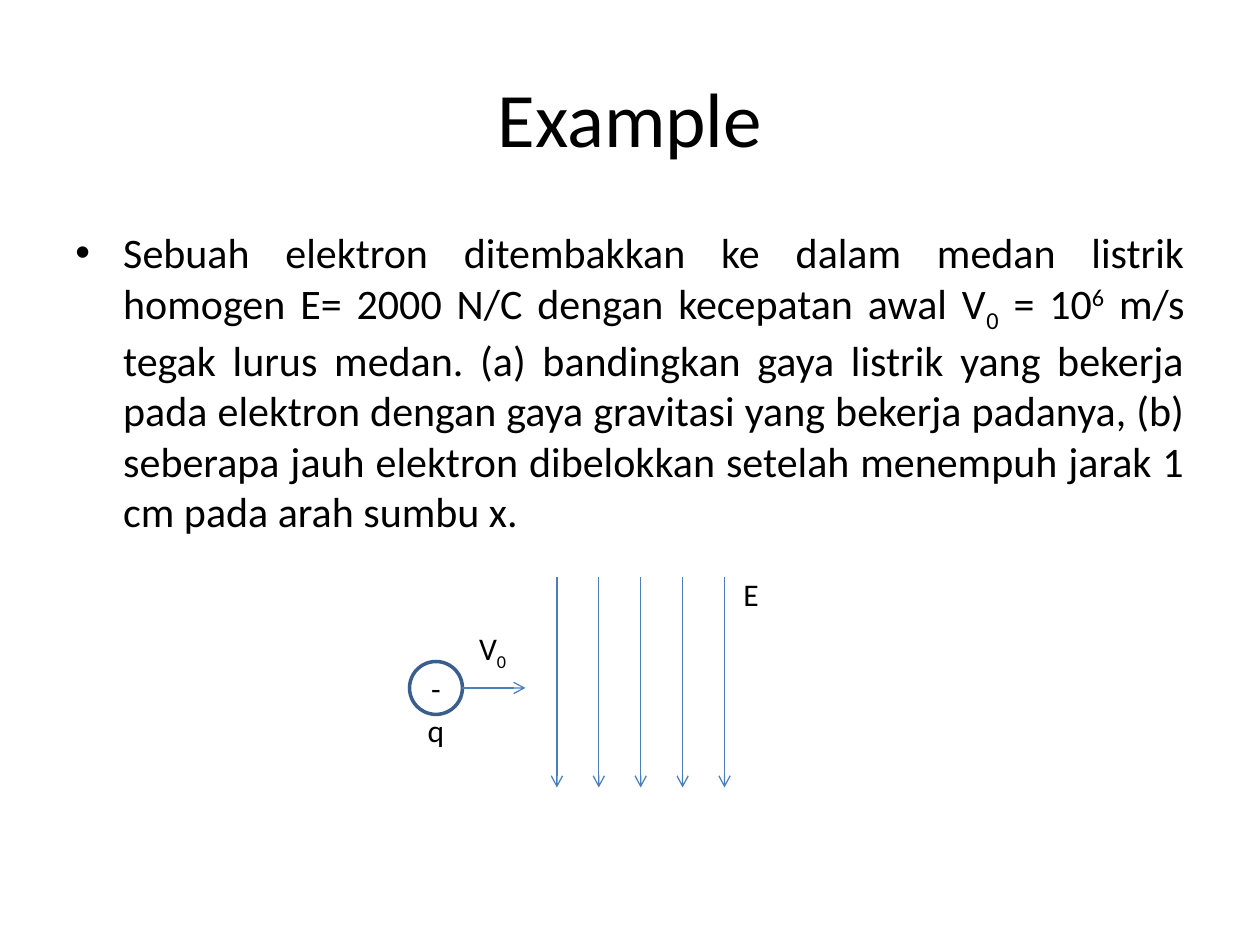
import pptx
import pptx.util
import pptx.dml.color
import pptx.enum.shapes
import pptx.enum.text
import pptx.oxml
import pptx.oxml.ns
from pptx.util import Inches

# Content: each run is (text, baseline shift in percent)
TITLE = "Example"
PROBLEM = [
    ("Sebuah elektron ditembakkan ke dalam medan listrik homogen E= 2000 N/C "
     "dengan kecepatan awal V", 0),
    ("0", -25),
    (" = 10", 0),
    ("6", 30),
    (" m/s tegak lurus medan. (a) bandingkan gaya listrik yang bekerja pada "
     "elektron dengan gaya gravitasi yang bekerja padanya, (b) seberapa jauh "
     "elektron dibelokkan setelah menempuh jarak 1 cm pada arah sumbu x.", 0),
]
# Labels: left, top, runs
LABELS = [
    (5.67, 4.42, [("E", 0)]),
    (3.62, 4.87, [("V", 0), ("0", -25)]),
    (3.17, 5.5, [("q", 0)]),
]
LABEL_SIZE = 0.58
FIELD_LEFT, FIELD_RIGHT, FIELD_TOP, FIELD_BOTTOM = 4.42, 5.75, 4.58, 6.25
FIELD_LINES = 5
CHARGE_LEFT, CHARGE_TOP, CHARGE_SIZE = 3.25, 5.25, 0.42
VELOCITY_LENGTH = 0.5

FONT, BLACK, BLUE, DARK_BLUE = "Calibri", "000000", "4B7EBC", "3A5F8C"
ALIGN = pptx.enum.text.PP_ALIGN
ANCHOR = pptx.enum.text.MSO_ANCHOR


def color(value):
    return pptx.dml.color.RGBColor.from_string(value)


def add_child(parent, tag, **attributes):
    child = pptx.oxml.parse_xml(f"<{tag} {pptx.oxml.ns.nsdecls('a')}/>")
    for name, value in attributes.items():
        child.set(name, value)
    parent.append(child)


def write(frame, runs, size, align=ALIGN.CENTER, anchor=ANCHOR.MIDDLE):
    frame.word_wrap = True
    frame.vertical_anchor = anchor
    para = frame.paragraphs[0]
    para.alignment = align
    for text, shift in runs:
        span = para.add_run()
        span.text = text
        span.font.name = FONT
        span.font.size = pptx.util.Pt(size)
        span.font.color.rgb = color(BLACK)
        if shift:
            span.font._element.set("baseline", str(shift * 1000))
    return para


def add_arrow(page, x1, y1, x2, y2):
    arrow = page.shapes.add_connector(
        pptx.enum.shapes.MSO_CONNECTOR.STRAIGHT,
        Inches(x1), Inches(y1), Inches(x2), Inches(y2))
    arrow.line.color.rgb = color(BLUE)
    arrow.line.width = pptx.util.Pt(0.75)
    add_child(arrow.line._get_or_add_ln(), "a:tailEnd", type="arrow")
    add_child(arrow._element.spPr, "a:effectLst")


def add_text(page, left, top, width, height):
    return page.shapes.add_textbox(
        Inches(left), Inches(top), Inches(width), Inches(height))


def main():
    deck = pptx.Presentation()
    deck.slide_width, deck.slide_height = Inches(10), Inches(7.5)
    page = deck.slides.add_slide(deck.slide_layouts[5])

    # Title
    title = page.shapes.title
    title.left, title.top = Inches(0.5), Inches(0.3)
    title.width, title.height = Inches(9), Inches(1.25)
    write(title.text_frame, [(TITLE, 0)], 44)

    # Problem text with a hanging bullet
    body = add_text(page, 0.5, 1.75, 9, 4.95)
    para = write(body.text_frame, PROBLEM, 24, ALIGN.JUSTIFY, ANCHOR.TOP)
    para.space_before = pptx.util.Pt(4.8)
    properties = para._p.get_or_add_pPr()
    properties.set("marL", str(Inches(0.38)))
    properties.set("indent", str(Inches(-0.38)))
    add_child(properties, "a:buFont", typeface="Arial")
    add_child(properties, "a:buChar", char="•")

    # Electric field, evenly spaced
    gap = (FIELD_RIGHT - FIELD_LEFT) / (FIELD_LINES - 1)
    for index in range(FIELD_LINES):
        x = FIELD_LEFT + index * gap
        add_arrow(page, x, FIELD_TOP, x, FIELD_BOTTOM)

    # Charge and its velocity
    charge = page.shapes.add_shape(
        pptx.enum.shapes.MSO_SHAPE.OVAL, Inches(CHARGE_LEFT),
        Inches(CHARGE_TOP), Inches(CHARGE_SIZE), Inches(CHARGE_SIZE))
    charge.shadow.inherit = False
    charge.fill.background()
    charge.line.color.rgb = color(DARK_BLUE)
    charge.line.width = pptx.util.Pt(2)
    write(charge.text_frame, [("-", 0)], 18)
    start = CHARGE_LEFT + CHARGE_SIZE
    middle = CHARGE_TOP + CHARGE_SIZE / 2
    add_arrow(page, start, middle, start + VELOCITY_LENGTH, middle)

    # Labels
    for left, top, runs in LABELS:
        label = add_text(page, left, top, LABEL_SIZE, LABEL_SIZE)
        write(label.text_frame, runs, 18)

    deck.save("out.pptx")


if __name__ == "__main__":
    main()
